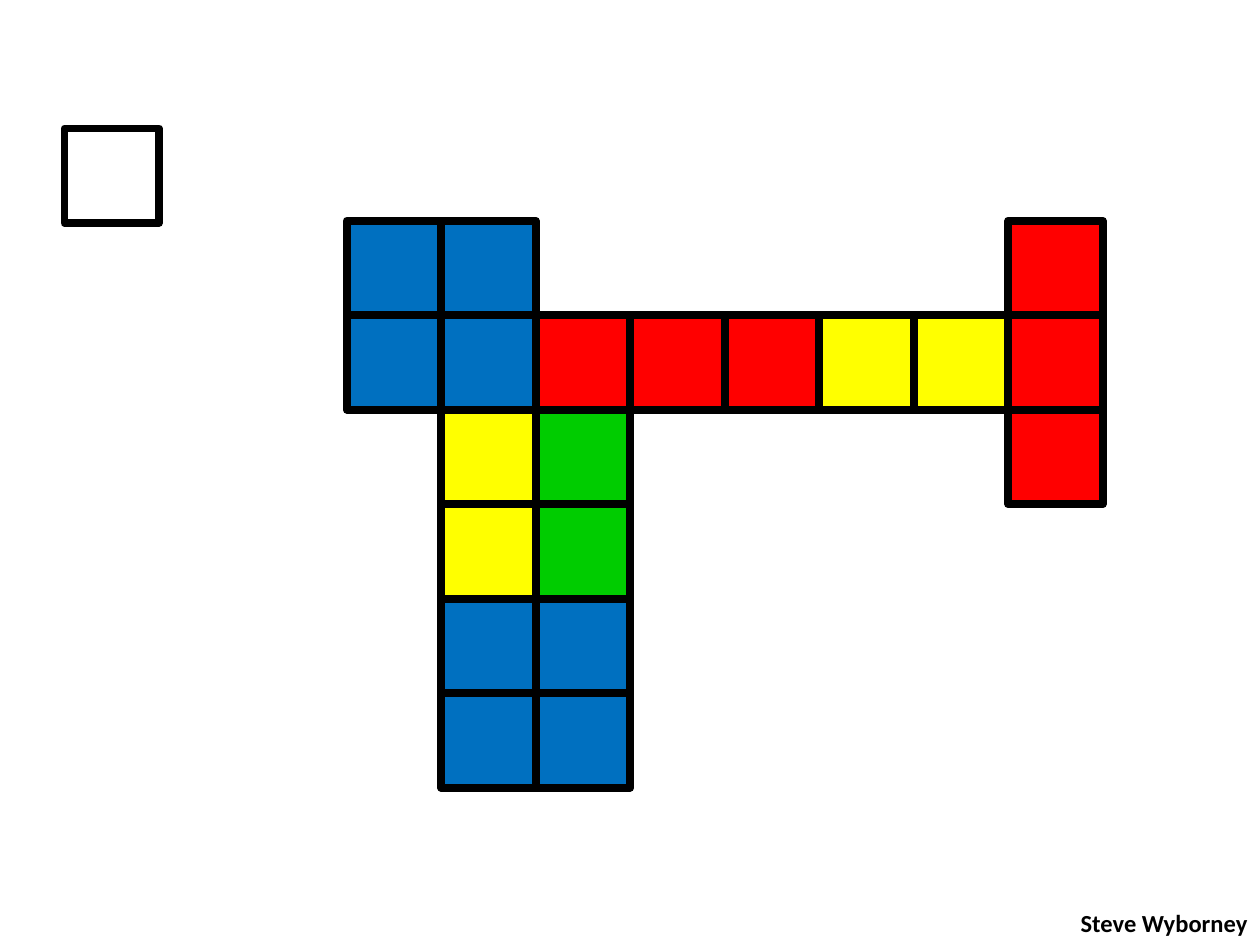
from dataclasses import dataclass

from pptx import Presentation
from pptx.dml.color import RGBColor
from pptx.enum.shapes import MSO_SHAPE
from pptx.enum.text import MSO_AUTO_SIZE, PP_ALIGN
from pptx.util import Cm, Pt


@dataclass(frozen=True)
class Theme:
    white: RGBColor = RGBColor(0xFF, 0xFF, 0xFF)
    black: RGBColor = RGBColor(0x00, 0x00, 0x00)
    blue: RGBColor = RGBColor(0x00, 0x70, 0xC0)
    yellow: RGBColor = RGBColor(0xFF, 0xFF, 0x00)
    green: RGBColor = RGBColor(0x00, 0xCC, 0x00)
    red: RGBColor = RGBColor(0xFF, 0x00, 0x00)
    font: str = "Calibri"
    credit_size: Pt = Pt(14)
    block_line: Pt = Pt(2)
    cell_line: Pt = Pt(4.5)


THEME = Theme()
CELL = Cm(7.62) // 4
GRID_LEFT, GRID_TOP = Cm(6.99), Cm(4.45)

# Column, row, columns spanned, rows spanned, colour
BLOCKS = [
    (0, 0, 2, 2, THEME.blue),
    (5, 1, 2, 1, THEME.yellow),
    (2, 1, 3, 1, THEME.red),
    (1, 2, 1, 2, THEME.yellow),
    (7, 0, 1, 3, THEME.red),
    (1, 4, 2, 2, THEME.blue),
    (2, 2, 1, 1, THEME.green),
    (2, 3, 1, 1, THEME.green),
]


def add_rectangle(shapes, left, top, width, height, line_width, fill=None):
    shape = shapes.add_shape(MSO_SHAPE.RECTANGLE, left, top, width, height)
    shape.shadow.inherit = False
    if fill is None:
        shape.fill.background()
    else:
        shape.fill.solid()
        shape.fill.fore_color.rgb = fill
    shape.line.color.rgb = THEME.black
    shape.line.width = line_width


def add_grid_rectangle(shapes, column, row, columns, rows, line_width, fill=None):
    """Place a rectangle that spans whole cells of the grid."""
    add_rectangle(shapes, GRID_LEFT + column * CELL, GRID_TOP + row * CELL,
                  columns * CELL, rows * CELL, line_width, fill)


def add_blocks(slide):
    group = slide.shapes.add_group_shape()
    for column, row, columns, rows, colour in BLOCKS:
        add_grid_rectangle(group.shapes, column, row, columns, rows,
                           THEME.block_line, colour)


def add_cell_outlines(slide):
    group = slide.shapes.add_group_shape()
    for left, top, columns, rows, _ in BLOCKS:
        for column in range(left, left + columns):
            for row in range(top, top + rows):
                add_grid_rectangle(group.shapes, column, row, 1, 1, THEME.cell_line)


def add_credit(slide, text):
    text_box = slide.shapes.add_textbox(Cm(21.51), Cm(18.19), Cm(3.89), Cm(0.86))
    text_frame = text_box.text_frame
    text_frame.word_wrap = False
    text_frame.auto_size = MSO_AUTO_SIZE.SHAPE_TO_FIT_TEXT
    paragraph = text_frame.paragraphs[0]
    paragraph.text = text
    paragraph.alignment = PP_ALIGN.RIGHT
    paragraph.font.name = THEME.font
    paragraph.font.size = THEME.credit_size
    paragraph.font.bold = True
    paragraph.font.color.rgb = THEME.black


def main():
    presentation = Presentation()
    presentation.slide_width = Cm(25.4)
    presentation.slide_height = Cm(19.05)
    slide = presentation.slides.add_slide(presentation.slide_layouts[6])

    add_rectangle(slide.shapes, Cm(1.3), Cm(2.59), CELL, CELL,
                  THEME.cell_line, THEME.white)
    add_blocks(slide)
    add_cell_outlines(slide)
    add_credit(slide, "Steve Wyborney")

    presentation.save("out.pptx")


if __name__ == "__main__":
    main()
